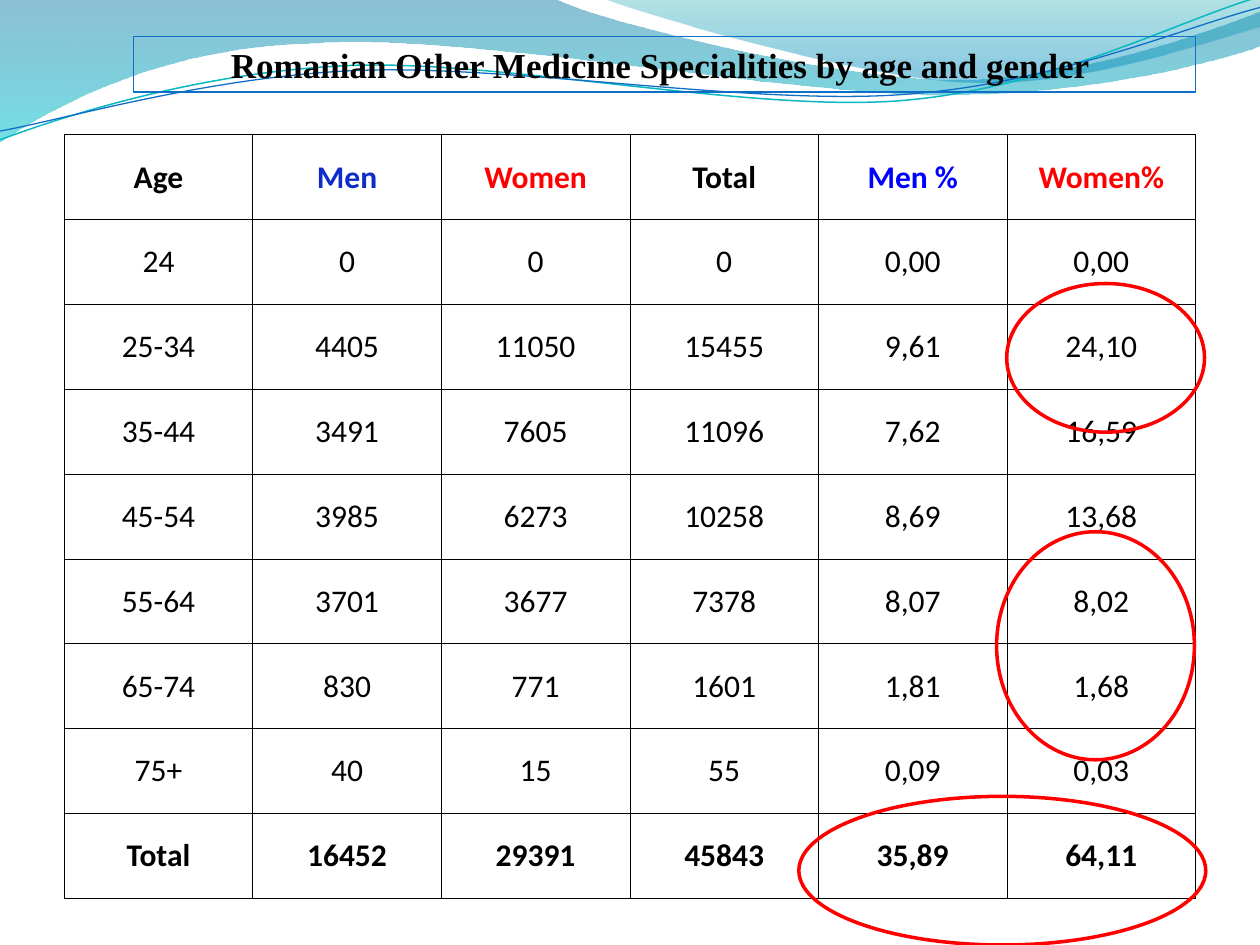
import math

import lxml.etree
import pptx
import pptx.dml.color
import pptx.enum.shapes
import pptx.enum.text
import pptx.oxml.ns
import pptx.util

Inches = pptx.util.Inches
Pt = pptx.util.Pt
RGBColor = pptx.dml.color.RGBColor
qn = pptx.oxml.ns.qn

BLACK = RGBColor(0x00, 0x00, 0x00)
RED = RGBColor(0xFF, 0x00, 0x00)
MEN_BLUE = RGBColor(0x0D, 0x2C, 0xC9)
PERCENT_BLUE = RGBColor(0x00, 0x00, 0xFF)
LINE_BLUE = RGBColor(0x0F, 0x6F, 0xC6)
LINE_TEAL = RGBColor(0x0A, 0xB8, 0xBF)
DEEP_BLUE = RGBColor(0x00, 0x74, 0xA1)
AQUA = RGBColor(0x00, 0xC6, 0xCF)
SEA_GREEN = RGBColor(0x00, 0xA1, 0xA9)
SKY_BLUE = RGBColor(0x00, 0x8B, 0xBF)

STROKE_TILT = 357.3
HEADER_COLOURS = (BLACK, MEN_BLUE, RED, BLACK, PERCENT_BLUE, RED)
AGE_ROWS = (
    ("Age", "Men", "Women", "Total", "Men %", "Women%"),
    ("24", "0", "0", "0", "0,00", "0,00"),
    ("25-34", "4405", "11050", "15455", "9,61", "24,10"),
    ("35-44", "3491", "7605", "11096", "7,62", "16,59"),
    ("45-54", "3985", "6273", "10258", "8,69", "13,68"),
    ("55-64", "3701", "3677", "7378", "8,07", "8,02"),
    ("65-74", "830", "771", "1601", "1,81", "1,68"),
    ("75+", "40", "15", "55", "0,09", "0,03"),
    ("Total", "16452", "29391", "45843", "35,89", "64,11"),
)
BROAD_WAVE = (
    (0, 0), (4.4, -0.01), (4.76, 0.17, 6.64, 0.63, 7.58, 0.63),
    (8.53, 0.63, 9.58, 0.26, 10, 0.09), (10.01, 0.36),
    (9.83, 0.44, 8.7, 0.76, 7.46, 0.75), (6.22, 0.75, 3.82, 0.28, 2.57, 0.34),
    (1.29, 0.36, 0.46, 0.83, -0.01, 1.13), (0, 0),
)
RIGHT_WAVE = (
    (4.79, -0.01), (5.09, 0.11, 6.82, 0.62, 7.69, 0.65),
    (8.56, 0.69, 9.61, 0.32, 10, 0.21), (10, 0), (4.79, -0.01),
)
TEAL_STROKE = (
    (0, 1.11), (0.48, 0.93, 1.58, 0.57, 2.77, 0.52),
    (3.95, 0.47, 5.93, 0.89, 7.13, 0.8), (8.33, 0.71, 9.38, 0.15, 9.98, -0.02),
)
BLUE_STROKE = (
    (0, 1.04), (0.47, 0.96, 1.64, 0.61, 2.83, 0.56),
    (4.03, 0.51, 5.97, 0.84, 7.17, 0.75), (8.36, 0.67, 9.41, 0.21, 10, 0.06),
)


def write_text(frame, text, *, size, font, colour=BLACK, bold=False):
    """Write one centred paragraph into a text frame."""
    paragraph = frame.paragraphs[0]
    paragraph.alignment = pptx.enum.text.PP_ALIGN.CENTER
    run = paragraph.add_run()
    run.text = text
    run.font.size = Pt(size)
    run.font.name = font
    run.font.bold = bold
    run.font.color.rgb = colour


def style_outline(shape, colour, width):
    """Leave a shape unfilled, with a plain outline."""
    shape.shadow.inherit = False
    shape.fill.background()
    shape.line.color.rgb = colour
    shape.line.width = Pt(width)


def turn_point(point, pivot, degrees):
    """Turn a point clockwise about a pivot."""
    angle = math.radians(degrees)
    dx, dy = point[0] - pivot[0], point[1] - pivot[1]
    return (pivot[0] + dx * math.cos(angle) - dy * math.sin(angle),
            pivot[1] + dx * math.sin(angle) + dy * math.cos(angle))


def draw_path(slide, left, top, path, close, pivot=(0, 0), tilt=0):
    """Build a freeform of lines and cubic curves, tilted about its pivot."""
    points = [turn_point(segment[i:i + 2], pivot, -tilt)
              for segment in path for i in range(0, len(segment), 2)]
    points = [(left + Inches(x), top + Inches(y)) for x, y in points]
    builder = slide.shapes.build_freeform(*points[0])
    builder.add_line_segments(points[1:], close=close)
    shape = builder.convert_to_shape()
    shape.shadow.inherit = False
    shape.rotation = tilt
    lines = iter(list(shape.element.iter(qn("a:lnTo"))))
    for segment in path[1:]:
        nodes = [next(lines) for _ in range(len(segment) // 2)]
        if len(nodes) == 3:
            curve = lxml.etree.Element(qn("a:cubicBezTo"))
            nodes[0].addprevious(curve)
            for node in nodes:
                curve.append(node[0])
                node.getparent().remove(node)
    return shape


def add_waves(slide, left, top):
    """Draw the translucent waves and thin strokes of the banner."""
    for path, stops in (
        (BROAD_WAVE, ((0, DEEP_BLUE, 45), (1, AQUA, 55))),
        (RIGHT_WAVE, ((0, SEA_GREEN, 30), (0.8, SKY_BLUE, 45))),
    ):
        wave = draw_path(slide, left, top, path, True)
        wave.line.fill.background()
        wave.fill.gradient()
        wave.fill.gradient_angle = 270
        for stop, (position, colour, _) in zip(wave.fill.gradient_stops, stops):
            stop.position = position
            stop.color.rgb = colour
        gradient = wave.element.spPr.find(qn("a:gradFill"))
        for colour_node, (_, _, opacity) in zip(gradient.iter(qn("a:srgbClr")), stops):
            lxml.etree.SubElement(colour_node, qn("a:alpha"), val=str(opacity * 1000))
    for path, pivot, colour, width in (
        (TEAL_STROKE, (4.99, 0.58), LINE_TEAL, 0.85),
        (BLUE_STROKE, (5, 0.59), LINE_BLUE, 0.75),
    ):
        stroke = draw_path(slide, left, top, path, False, pivot, STROKE_TILT)
        style_outline(stroke, colour, width)


def add_title(slide, left, top, width, height):
    """Add the outlined title box."""
    title = slide.shapes.add_shape(
        pptx.enum.shapes.MSO_SHAPE.RECTANGLE, left, top, width, height)
    style_outline(title, LINE_BLUE, 0.75)
    title.text_frame.word_wrap = True
    title.text_frame.auto_size = pptx.enum.text.MSO_AUTO_SIZE.SHAPE_TO_FIT_TEXT
    write_text(title.text_frame, "Romanian Other Medicine Specialities by age and gender ",
               size=20, font="Times New Roman", bold=True)


def add_cell_borders(cell, colour, width):
    """Draw a solid line on all four sides of a cell."""
    properties = cell._tc.get_or_add_tcPr()
    for side in ("a:lnL", "a:lnR", "a:lnT", "a:lnB"):
        border = lxml.etree.SubElement(properties, qn(side), w=str(Pt(width)))
        fill = lxml.etree.SubElement(border, qn("a:solidFill"))
        lxml.etree.SubElement(fill, qn("a:srgbClr"), val=str(colour))


def add_age_table(slide, left, top, width, height):
    """Add the table of specialists by age and gender on an even grid."""
    row_count, column_count = len(AGE_ROWS), len(AGE_ROWS[0])
    table = slide.shapes.add_table(
        row_count, column_count, left, top, width, height).table
    for row_index, values in enumerate(AGE_ROWS):
        for column_index, value in enumerate(values):
            cell = table.cell(row_index, column_index)
            cell.margin_left = cell.margin_right = 0
            cell.margin_top = cell.margin_bottom = 0
            cell.vertical_anchor = pptx.enum.text.MSO_ANCHOR.MIDDLE
            add_cell_borders(cell, BLACK, 0.5)
            cell.fill.background()
            write_text(cell.text_frame, value, size=18, font="Calibri",
                       colour=BLACK if row_index else HEADER_COLOURS[column_index],
                       bold=row_index in (0, row_count - 1))


def add_highlight(slide, left, top, width, height):
    """Circle notable values with a red ellipse."""
    ellipse = slide.shapes.add_shape(
        pptx.enum.shapes.MSO_SHAPE.OVAL, left, top, width, height)
    style_outline(ellipse, RED, 2)


def main():
    """Build and save the slide."""
    presentation = pptx.Presentation()
    presentation.slide_width = Inches(10)
    presentation.slide_height = Inches(7.5)
    slide = presentation.slides.add_slide(presentation.slide_layouts[6])
    add_waves(slide, 0, 0)
    add_title(slide, Inches(1.06), Inches(0.29), Inches(8.43), Inches(0.44))
    add_age_table(slide, Inches(0.51), Inches(1.07), Inches(8.98), Inches(6.06))
    for box in ((7.99, 2.25, 1.57, 1.18), (7.91, 4.22, 1.57, 1.81),
                (6.34, 6.32, 3.23, 1.18)):
        add_highlight(slide, *map(Inches, box))
    presentation.save("out.pptx")


if __name__ == "__main__":
    main()
